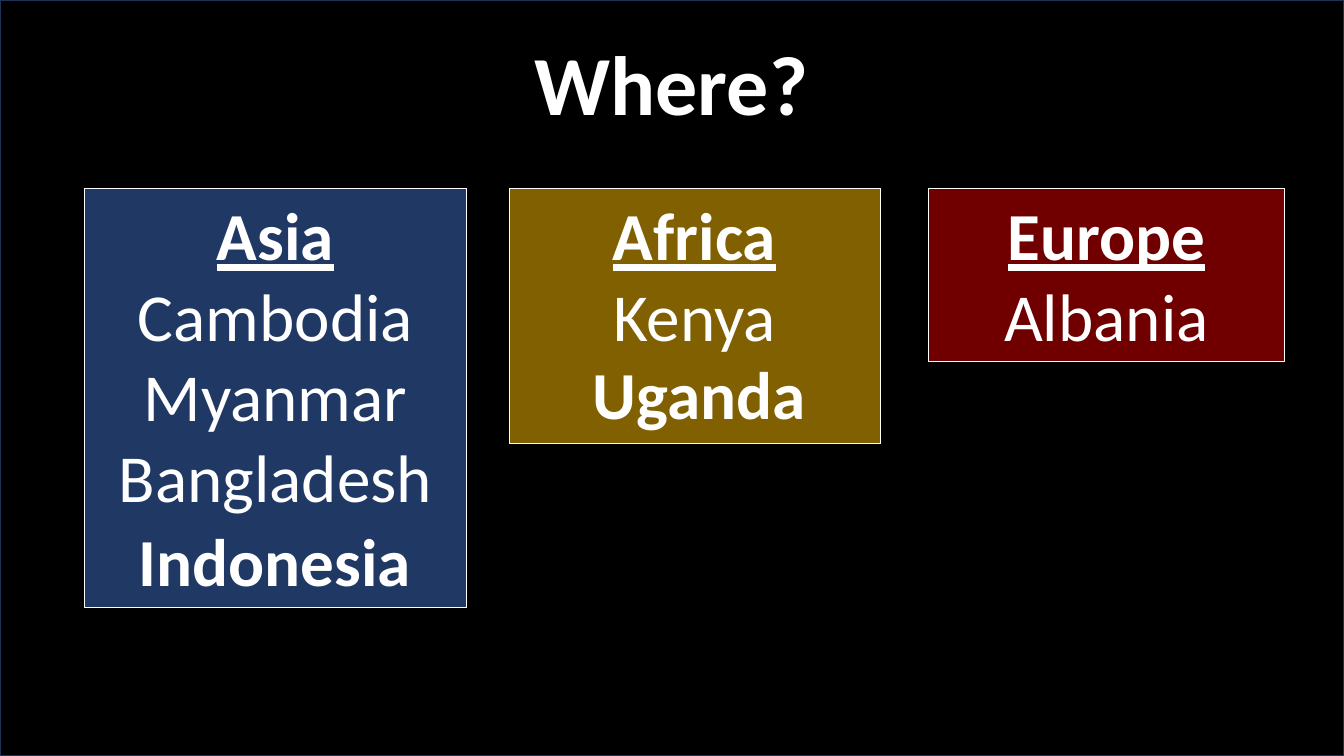
from pptx import Presentation
from pptx.dml.color import RGBColor
from pptx.enum.shapes import MSO_SHAPE
from pptx.enum.text import MSO_ANCHOR, PP_ALIGN
from pptx.util import Cm, Pt

RECTANGLE = MSO_SHAPE.RECTANGLE
TOP = MSO_ANCHOR.TOP
CENTER = PP_ALIGN.CENTER

BLACK = RGBColor(0x00, 0x00, 0x00)
WHITE = RGBColor(0xFF, 0xFF, 0xFF)
EDGE = RGBColor(0x1E, 0x32, 0x56)
NAVY = RGBColor(0x20, 0x38, 0x64)
OLIVE = RGBColor(0x80, 0x60, 0x00)
MAROON = RGBColor(0x70, 0x00, 0x00)

FONT = "Calibri"
PAGE_WIDTH, PAGE_HEIGHT = 33.87, 19.05
PANEL_TOP = 4.75
LINE_HEIGHT = 2.06
PANEL_PADDING = 0.25

# Continent, left, width, fill, rows of height, countries
PANELS = [
    ("Africa", 12.83, 9.35, OLIVE, 3, ["Kenya"]),
    ("Asia", 2.13, 9.63, NAVY, 5, ["Cambodia", "Myanmar", "Bangladesh"]),
    ("Europe", 23.39, 8.99, MAROON, 2, ["Albania"]),
]


def write_line(para, text, size=48, bold=False, underline=False):
    para.alignment = CENTER
    span = para.add_run()
    span.text = text
    font = span.font
    font.name = FONT
    font.size = Pt(size)
    font.bold = bold
    font.underline = underline
    font.color.rgb = WHITE


def add_rectangle(page, left, top, width, height, fill, line, line_width):
    box = page.shapes.add_shape(RECTANGLE, Cm(left), Cm(top), Cm(width), Cm(height))
    box.shadow.inherit = False
    box.fill.solid()
    box.fill.fore_color.rgb = fill
    box.line.color.rgb = line
    box.line.width = Pt(line_width)
    return box


def add_label(page, text, left, top, width, height, size=48):
    box = page.shapes.add_textbox(Cm(left), Cm(top), Cm(width), Cm(height))
    box.text_frame.word_wrap = True
    write_line(box.text_frame.paragraphs[0], text, size=size, bold=True)


def add_panel(page, continent, left, width, fill, rows, countries):
    """Add a continent box, tall enough for the given number of text rows."""
    height = PANEL_PADDING + rows * LINE_HEIGHT
    box = add_rectangle(page, left, PANEL_TOP, width, height, fill, WHITE, 0.75)
    frame = box.text_frame
    frame.word_wrap = True
    frame.vertical_anchor = TOP
    write_line(frame.paragraphs[0], continent, bold=True, underline=True)
    for country in countries:
        write_line(frame.add_paragraph(), country)


def main():
    deck = Presentation()
    deck.slide_width = Cm(PAGE_WIDTH)
    deck.slide_height = Cm(PAGE_HEIGHT)
    page = deck.slides.add_slide(deck.slide_layouts[6])

    add_rectangle(page, 0, 0, PAGE_WIDTH, PAGE_HEIGHT, BLACK, EDGE, 1)
    add_label(page, "Where?", 13.06, 0.66, 7.72, 2.82, size=60)
    for panel in PANELS:
        add_panel(page, *panel)
    add_label(page, "Indonesia", 2.26, 12.95, 9.35, 2.31)
    add_label(page, "Uganda", 13.69, 8.76, 7.87, 2.31)

    deck.save("out.pptx")


if __name__ == "__main__":
    main()
